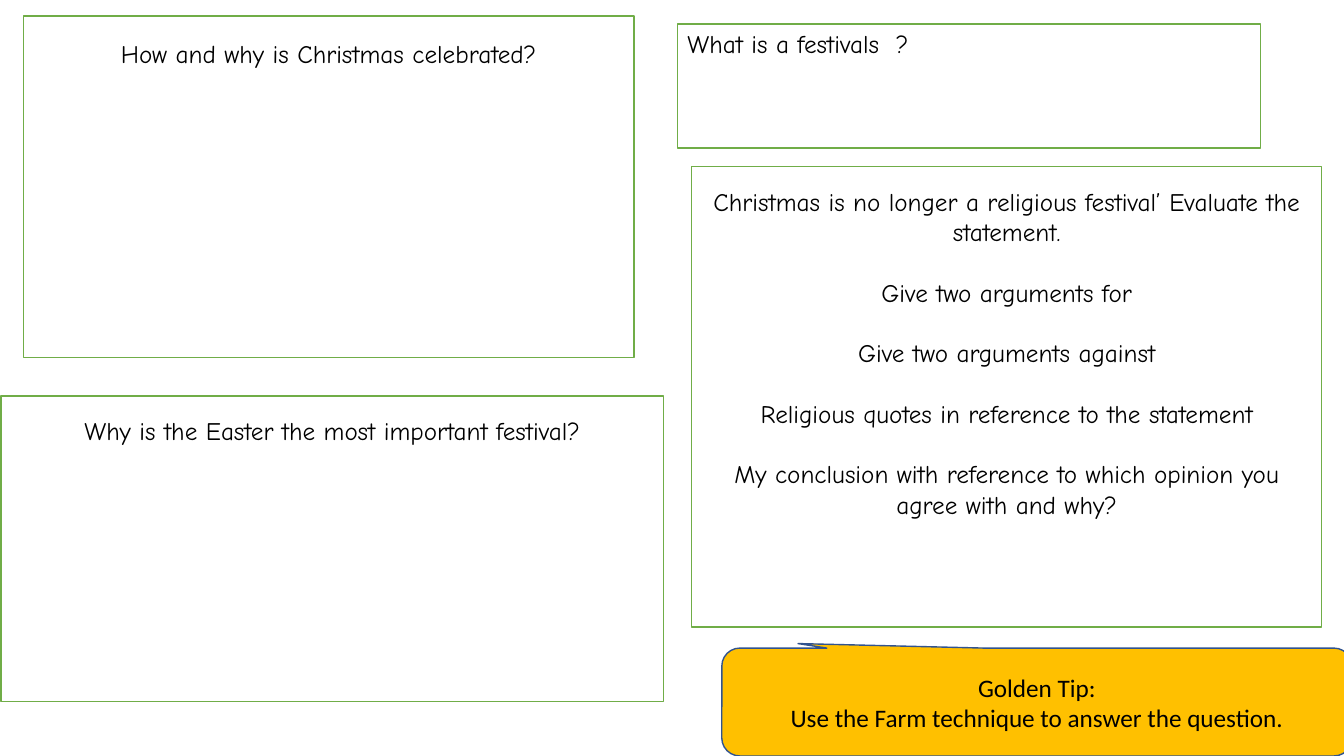
"""Build a revision slide with four question boxes and a golden tip callout."""
from dataclasses import dataclass

from pptx import Presentation
from pptx.dml.color import RGBColor
from pptx.enum.shapes import MSO_SHAPE
from pptx.enum.text import MSO_ANCHOR, PP_ALIGN
from pptx.slide import Slide
from pptx.util import Inches, Length, Pt

COLOURS = {
    "paper": "FFFFFF",
    "green": "70AD47",
    "gold": "FFC000",
    "navy": "31538F",
    "ink": "000000",
}
SLIDE_WIDTH, SLIDE_HEIGHT = Inches(13.33), Inches(7.5)
BLANK_LAYOUT = 6
LINE_GAP = Pt(21.6)


@dataclass(frozen=True)
class Panel:
    """Place, text and look of one panel, with lengths in percent of the slide."""

    left: float
    top: float
    width: float
    height: float
    lines: tuple[str, ...]
    inset_top: float = 0.67
    spaced_lines: tuple[int, ...] = ()
    alignment: PP_ALIGN = PP_ALIGN.CENTER
    anchor: MSO_ANCHOR = MSO_ANCHOR.TOP
    preset: MSO_SHAPE = MSO_SHAPE.RECTANGLE
    adjustments: tuple[float, ...] = ()
    fill: str = "paper"
    outline: str = "green"
    font_name: str = "Comic Neue"


PANELS = (
    Panel(1.73, 2.13, 45.46, 45.2, ("How and why is Christmas celebrated?",), 2.93),
    Panel(
        51.46, 22, 46.89, 60.93,
        (
            "Christmas is no longer a religious festival’ Evaluate the statement.",
            "Give two arguments for",
            "Give two arguments against",
            "Religious quotes in reference to the statement",
            "My conclusion with reference to which opinion you",
            "agree with and why?",
        ),
        2.67,
        spaced_lines=(1, 2, 3, 4),
    ),
    Panel(0.08, 52.4, 49.29, 40.4,
          ("Why is the Easter the most important festival?",), 2.53),
    Panel(50.41, 3.2, 43.36, 16.4, ("What is a festivals  ?",), 0.53,
          alignment=PP_ALIGN.LEFT),
    Panel(
        53.71, 85.73, 46.89, 14.27,
        ("Golden Tip:", "Use the Farm technique to answer the question."),
        anchor=MSO_ANCHOR.MIDDLE,
        preset=MSO_SHAPE.ROUNDED_RECTANGULAR_CALLOUT,
        adjustments=(-0.379, -0.542, 0.167),
        fill="gold",
        outline="navy",
        font_name="Calibri",
    ),
)


def colour(name: str) -> RGBColor:
    """Return the named colour."""
    return RGBColor.from_string(COLOURS[name])


def across(percent: float) -> Length:
    """Turn a share of the slide's width into a length."""
    return Length(round(SLIDE_WIDTH * percent / 100))


def down(percent: float) -> Length:
    """Turn a share of the slide's height into a length."""
    return Length(round(SLIDE_HEIGHT * percent / 100))


def apply_format(target: object, values: dict[str, object]) -> None:
    """Set each named attribute on the target."""
    for name, value in values.items():
        setattr(target, name, value)


def draw_panel(slide: Slide, panel: Panel) -> None:
    """Draw one panel with its text."""
    shape = slide.shapes.add_shape(
        panel.preset, across(panel.left), down(panel.top),
        across(panel.width), down(panel.height),
    )
    for index, adjustment in enumerate(panel.adjustments):
        shape.adjustments[index] = adjustment
    shape.shadow.inherit = False
    shape.fill.solid()
    shape.fill.fore_color.rgb = colour(panel.fill)
    shape.line.color.rgb = colour(panel.outline)
    shape.line.width = Pt(1)

    text_frame = shape.text_frame
    apply_format(text_frame, {
        "text": "\n".join(panel.lines),
        "word_wrap": True,
        "vertical_anchor": panel.anchor,
        "margin_top": down(panel.inset_top),
    })
    for index, paragraph in enumerate(text_frame.paragraphs):
        paragraph.alignment = panel.alignment
        if index in panel.spaced_lines:
            paragraph.space_before = LINE_GAP
        apply_format(paragraph.font, {"name": panel.font_name, "size": Pt(18)})
        paragraph.font.color.rgb = colour("ink")


def main() -> None:
    """Create and save the presentation."""
    presentation = Presentation()
    apply_format(presentation, {
        "slide_width": SLIDE_WIDTH, "slide_height": SLIDE_HEIGHT,
    })
    slide = presentation.slides.add_slide(presentation.slide_layouts[BLANK_LAYOUT])
    for panel in PANELS:
        draw_panel(slide, panel)
    presentation.save("out.pptx")


if __name__ == "__main__":
    main()
